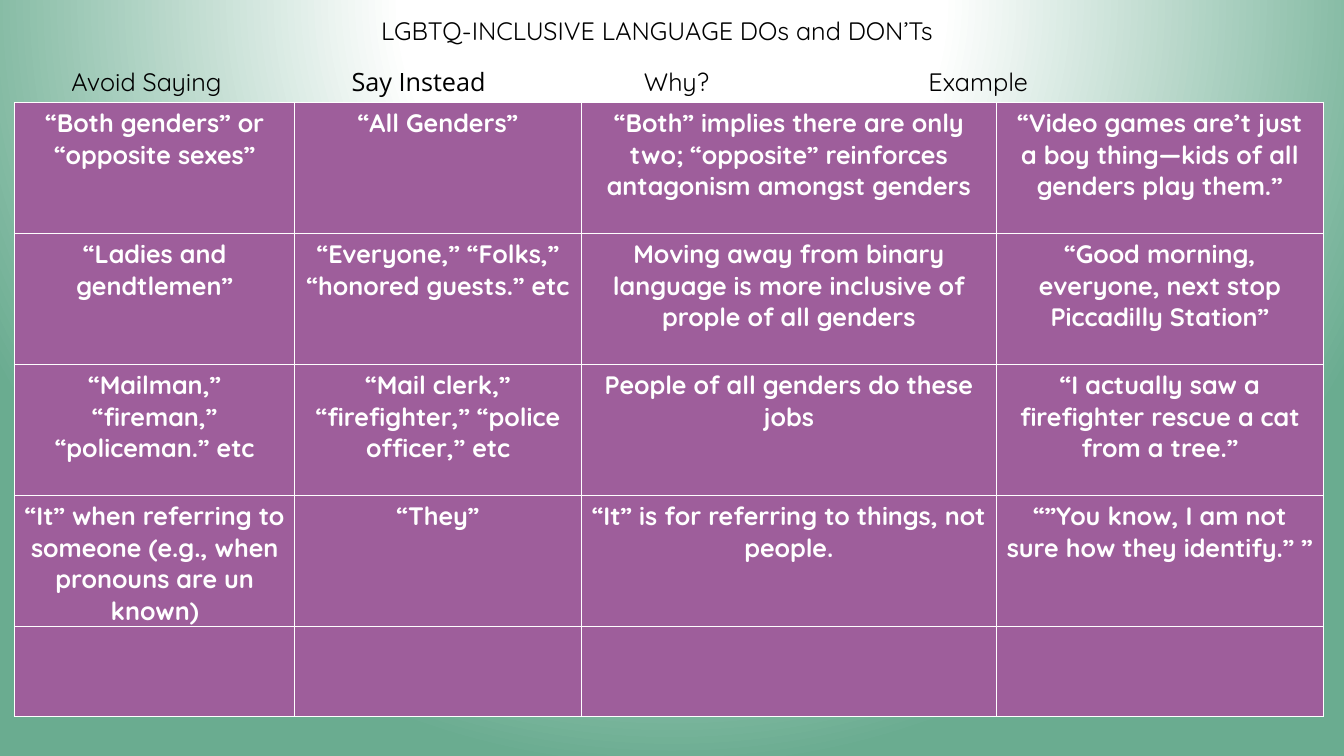
from pptx import Presentation
from pptx.dml.color import RGBColor
from pptx.enum.text import MSO_ANCHOR as Anchor, PP_ALIGN as Align
from pptx.oxml import parse_xml
from pptx.oxml.ns import nsdecls
from pptx.util import Cm, Pt

BLACK = RGBColor(0x00, 0x00, 0x00)
WHITE = RGBColor(0xFF, 0xFF, 0xFF)
PURPLE = RGBColor(0x9E, 0x5E, 0x9B)
GREEN = RGBColor(0x6A, 0xAC, 0x90)

HEADS = [("Avoid Saying", "Quicksand"), ("Say Instead", "Open Sans"),
         ("Why?", "Quicksand"), ("Example", "Quicksand")]
TABS = [7.06, 14.43, 21.6]
WIDTHS = [7.06, 7.22, 10.46, 8.24]
HEIGHTS = [3.3] * 4 + [2.28]
ROWS = [
    ["“Both genders” or “opposite sexes”",
     "“All Genders”",
     "“Both” implies there are only two; “opposite” reinforces antagonism amongst genders",
     "“Video games are’t just a boy thing—kids of all genders play them.”"],
    ["“Ladies and gendtlemen”",
     "“Everyone,” “Folks,” “honored guests.” etc",
     "Moving away from binary language is more inclusive of prople of all genders",
     "“Good morning, everyone, next stop Piccadilly Station”"],
    ["“Mailman,” “fireman,” “policeman.” etc",
     "“Mail clerk,” “firefighter,” “police officer,” etc",
     "People of all genders do these jobs",
     "“I actually saw a firefighter rescue a cat from a tree.”"],
    ["“It” when referring to someone (e.g., when pronouns are un known)",
     "“They”",
     "“It” is for referring to things, not people.",
     "“”You know, I am not sure how they identify.” ”"],
    [""] * 4,
]


def write(para, text, face="Quicksand", color=BLACK, bold=False, align=Align.LEFT):
    para.alignment = align
    run = para.add_run()
    run.text = text
    font = run.font
    font.name, font.size, font.bold = face, Pt(18), bold
    font.color.rgb = color


deck = Presentation()
deck.slide_width, deck.slide_height = Cm(33.87), Cm(19.05)
slide = deck.slides.add_slide(deck.slide_layouts[5])

# Radial background, centred above the top edge
stops = "".join(
    f'<a:gs pos="{pos * 1000}"><a:srgbClr val="{color}"/></a:gs>'
    for pos, color in [(0, WHITE), (35, WHITE), (100, GREEN)])
slide.element.cSld.insert(0, parse_xml(
    f'<p:bg {nsdecls("p", "a")}><p:bgPr><a:gradFill rotWithShape="1">'
    f'<a:gsLst>{stops}</a:gsLst><a:path path="circle">'
    '<a:fillToRect l="50000" t="-80000" r="50000" b="180000"/></a:path>'
    '</a:gradFill><a:effectLst/></p:bgPr></p:bg>'))

# Title
title = slide.shapes.title
title.left, title.top, title.width, title.height = Cm(9.35), Cm(0.25), Cm(16.92), Cm(1.03)
title.text_frame.vertical_anchor = Anchor.TOP
title.text_frame.word_wrap = True
write(title.text_frame.paragraphs[0], "LGBTQ-INCLUSIVE LANGUAGE DOs and DON’Ts")

# Column heads on tab stops
heads = slide.shapes.add_textbox(Cm(1.55), Cm(1.55), Cm(29.64), Cm(1.03))
heads.text_frame.word_wrap = True
para = heads.text_frame.paragraphs[0]
marks = "".join(f'<a:tab pos="{Cm(tab)}" algn="l"/>' for tab in TABS)
para._p.get_or_add_pPr().append(
    parse_xml(f'<a:tabLst {nsdecls("a")}>{marks}</a:tabLst>'))
for i, (head, face) in enumerate(HEADS):
    write(para, "\t" + head if i else head, face=face)

# Table
table = slide.shapes.add_table(
    len(ROWS), len(WIDTHS), Cm(0.37), Cm(2.58),
    Cm(sum(WIDTHS)), Cm(sum(HEIGHTS))).table
table.first_row = table.horz_banding = False
for col, width in zip(table.columns, WIDTHS):
    col.width = Cm(width)
for row, height, texts in zip(table.rows, HEIGHTS, ROWS):
    row.height = Cm(height)
    for cell, text in zip(row.cells, texts):
        cell.margin_bottom = 0
        props = cell._tc.get_or_add_tcPr()
        for side in "LRTB":
            props.append(parse_xml(
                f'<a:ln{side} {nsdecls("a")} w="{Pt(1)}"><a:solidFill>'
                f'<a:srgbClr val="{WHITE}"/></a:solidFill></a:ln{side}>'))
        cell.fill.solid()
        cell.fill.fore_color.rgb = PURPLE
        if text:
            write(cell.text_frame.paragraphs[0], text,
                  color=WHITE, bold=True, align=Align.CENTER)

deck.save("out.pptx")
